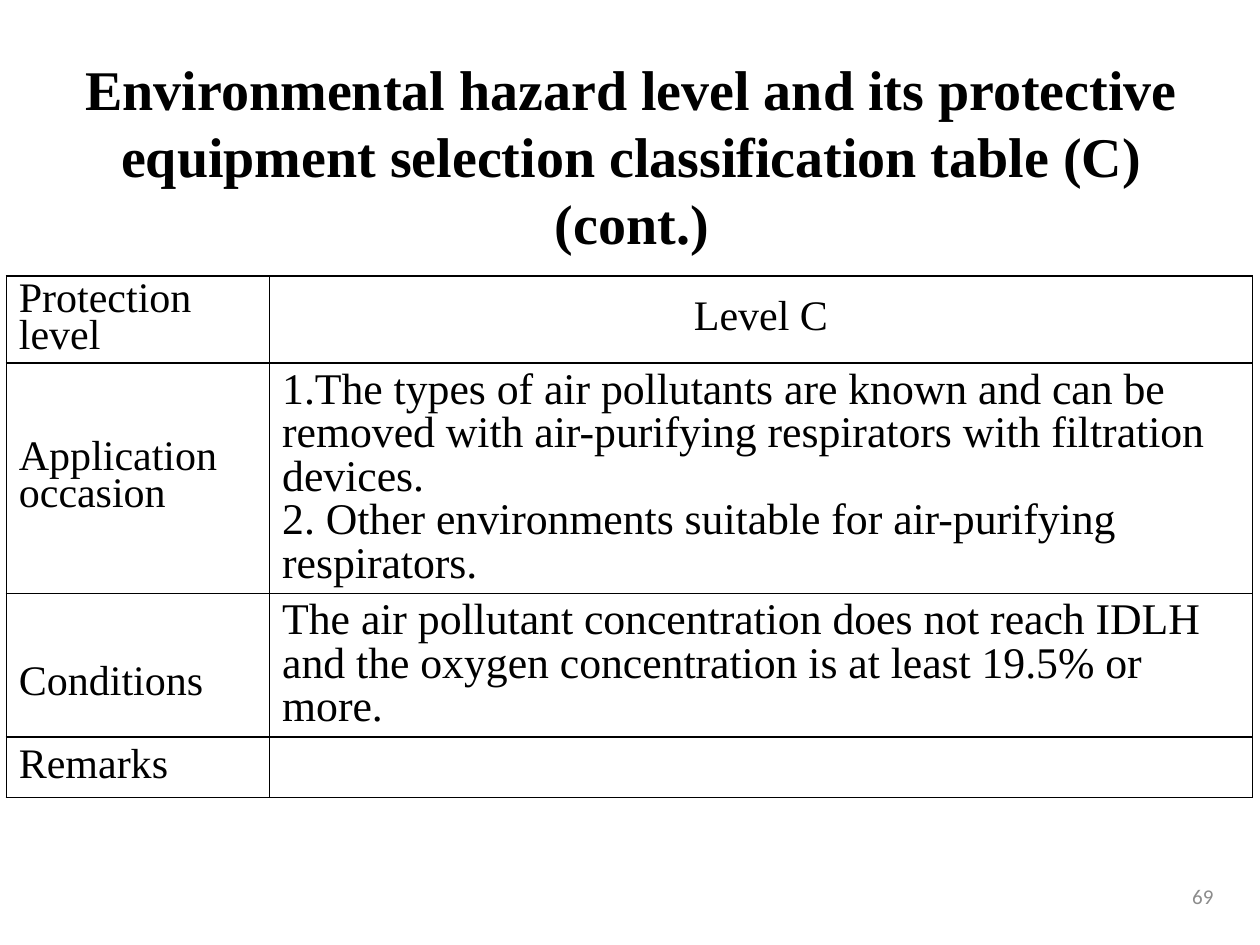
from lxml.etree import SubElement
from pptx import Presentation
from pptx.dml.color import RGBColor
from pptx.enum.text import MSO_ANCHOR, MSO_AUTO_SIZE, PP_ALIGN
from pptx.oxml import parse_xml
from pptx.oxml.ns import nsdecls, qn
from pptx.util import Inches, Pt

BLACK = RGBColor(0, 0, 0)
GREY = RGBColor(0x8C, 0x8C, 0x8C)
WHITE = RGBColor(255, 255, 255)
SERIF = "Times New Roman"

TITLE = ("Environmental hazard level and its protective equipment "
         "selection classification table (C) (cont.)")
ROWS = [
    ("Protection level", ["Level C"]),
    ("Application occasion", [
        "The types of air pollutants are known and can be removed with "
        "air-purifying respirators with filtration devices.",
        " Other environments suitable for air-purifying respirators."]),
    ("Conditions", [
        "The air pollutant concentration does not reach IDLH and the oxygen "
        "concentration is at least 19.5% or more."]),
    ("Remarks", []),
]
WIDTHS = [2.09, 7.8]
HEIGHTS = [0.69, 1.83, 1.14, 0.48]


def write(frame, *texts, size=24, font=SERIF, color=BLACK, bold=False,
          align=PP_ALIGN.LEFT, space=None, number=False):
    for i, text in enumerate(texts):
        para = frame.paragraphs[0] if i == 0 else frame.add_paragraph()
        para.alignment = align
        if space:
            para.line_spacing = space
        if number:
            props = para._p.get_or_add_pPr()
            props.set("marL", "0")
            props.set("indent", "0")
            SubElement(props, qn("a:buAutoNum"), type="arabicPeriod")
        run = para.add_run()
        run.text = text
        run.font.name = font
        run.font.size = Pt(size)
        run.font.bold = bold
        run.font.color.rgb = color


def border(cell):
    props = cell._tc.get_or_add_tcPr()
    for i, side in enumerate("LRTB"):
        props.insert(i, parse_xml(
            f'<a:ln{side} {nsdecls("a")} w="{Pt(1)}"><a:solidFill>'
            f'<a:srgbClr val="{BLACK}"/></a:solidFill></a:ln{side}>'))


def place(shape, left, top, width, height, anchor):
    shape.left, shape.top = Inches(left), Inches(top)
    shape.width, shape.height = Inches(width), Inches(height)
    frame = shape.text_frame
    frame.word_wrap = True
    frame.auto_size = MSO_AUTO_SIZE.NONE
    frame.vertical_anchor = anchor
    return frame


def main():
    deck = Presentation()
    deck.slide_width, deck.slide_height = Inches(10), Inches(7.5)
    slide = deck.slides.add_slide(deck.slide_layouts[5])

    frame = place(slide.shapes.title, 0.23, 0.81, 9.57, 1.27, MSO_ANCHOR.BOTTOM)
    write(frame, TITLE, size=32, bold=True, align=PP_ALIGN.CENTER)

    table = slide.shapes.add_table(
        len(ROWS), len(WIDTHS), Inches(0.05), Inches(2.19),
        Inches(sum(WIDTHS)), Inches(sum(HEIGHTS))).table
    table.first_row = table.horz_banding = False
    for col, width in zip(table.columns, WIDTHS):
        col.width = Inches(width)
    for row, height in zip(table.rows, HEIGHTS):
        row.height = Inches(height)
    for r, (label, body) in enumerate(ROWS):
        head, cell = table.cell(r, 0), table.cell(r, 1)
        write(head.text_frame, label, space=0.8)
        if r == 0:
            write(cell.text_frame, *body, space=0.8, align=PP_ALIGN.CENTER)
        else:
            write(cell.text_frame, *body, size=25, space=0.9,
                  number=len(body) > 1)
        for each in (head, cell):
            each.vertical_anchor = MSO_ANCHOR.MIDDLE
            each.fill.background()
            border(each)
    # "Conditions" sits one line below the middle of its row
    table.cell(2, 0).margin_top = Inches(0.35)
    last = table.cell(3, 0).fill
    last.solid()
    last.fore_color.rgb = WHITE

    page = slide.shapes.add_textbox(0, 0, 0, 0)
    write(place(page, 7.4, 6.91, 2.33, 0.4, MSO_ANCHOR.MIDDLE), "69",
          size=12, font="Calibri", color=GREY, align=PP_ALIGN.RIGHT)
    deck.save("out.pptx")


if __name__ == "__main__":
    main()
